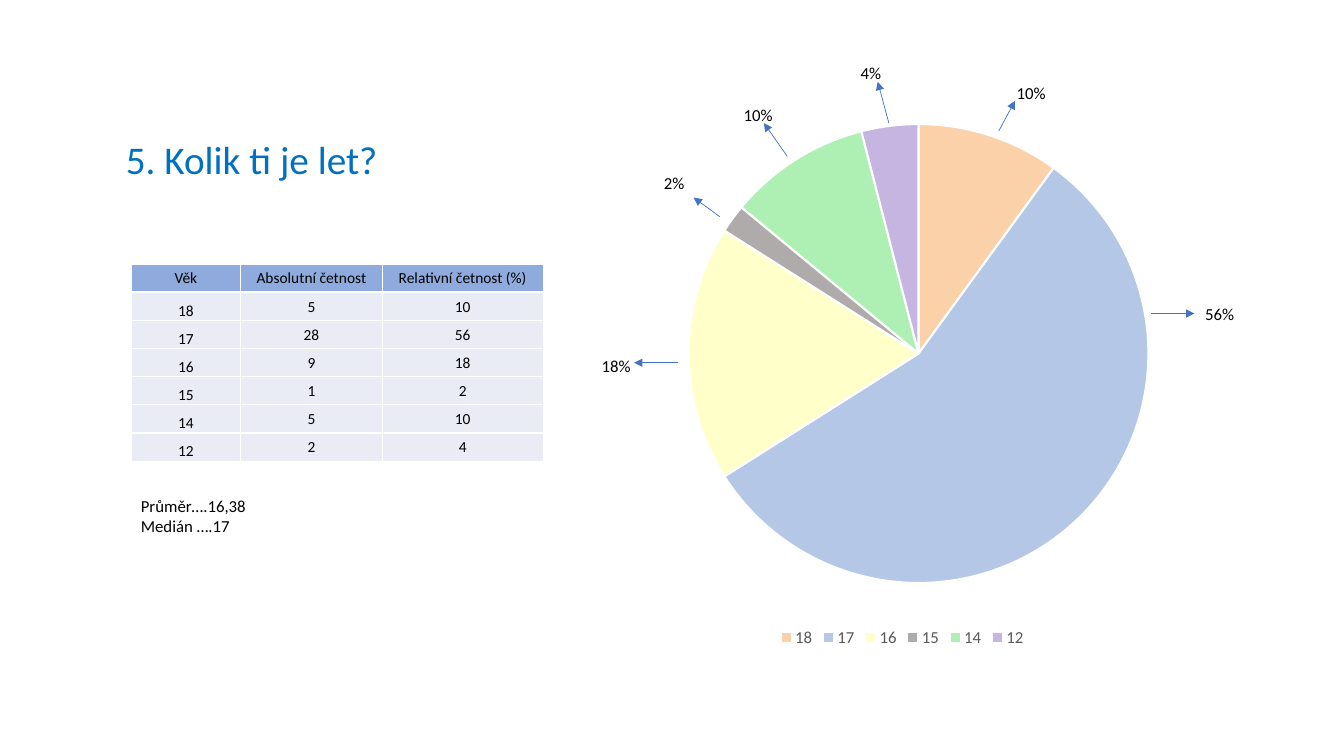
import pptx
import pptx.chart.data
import pptx.dml.color
import pptx.enum.chart
import pptx.enum.shapes
import pptx.enum.text
import pptx.oxml
import pptx.oxml.ns
import pptx.util
from pptx.util import Cm, Pt

FONT = "Calibri"
COLORS = {
    "title": "0070C0",
    "text": "000000",
    "legend": "595959",
    "header": "8FAADC",
    "body": "E9EBF5",
    "border": "FFFFFF",
    "arrow": "4472C4",
}
# Age, absolute frequency, relative frequency in percent, slice colour
AGES = [
    (18, 5, 10, "FAD1A8"),
    (17, 28, 56, "B4C7E7"),
    (16, 9, 18, "FFFFC9"),
    (15, 1, 2, "AFABAB"),
    (14, 5, 10, "AEF0B4"),
    (12, 2, 4, "C6B5E1"),
]
# For each age: arrow start, arrow end, label corner (cm)
CALLOUTS = [
    ((25.17, 3.3), (25.58, 2.54), (25.37, 1.96)),
    ((29.01, 7.9), (30.1, 7.9), (30.12, 7.52)),
    ((17.09, 9.14), (15.98, 9.14), (14.91, 8.84)),
    ((18.14, 5.46), (17.48, 4.98), (16.48, 4.22)),
    ((19.84, 3.94), (19.25, 3.1), (18.49, 2.51)),
    ((22.4, 3.1), (22.12, 2.06), (21.44, 1.45)),
]
HEADINGS = ("Věk", "Absolutní četnost", "Relativní četnost (%)")
COLUMN_WIDTHS = (2.77, 3.56, 4.06)
ROW_HEIGHT = 0.71


def rgb(name):
    return pptx.dml.color.RGBColor.from_string(COLORS.get(name, name))


def style_font(font, size, color):
    font.name = FONT
    font.size = Pt(size)
    font.color.rgb = rgb(color)


def add_title(slide, text):
    title = slide.shapes.title
    title.left, title.top, title.width, title.height = Cm(2.92), Cm(2.24), Cm(29.21), Cm(3.68)
    title.text_frame.text = text
    title.text_frame.vertical_anchor = pptx.enum.text.MSO_ANCHOR.MIDDLE
    heading = title.text_frame.paragraphs[0]
    heading.alignment = pptx.enum.text.PP_ALIGN.LEFT
    heading.line_spacing = 0.9
    style_font(heading.font, 28, "title")


def add_text(slide, lines, left, top, width, height, wrap):
    frame = slide.shapes.add_textbox(Cm(left), Cm(top), Cm(width), Cm(height)).text_frame
    frame.word_wrap = wrap
    frame.auto_size = pptx.enum.text.MSO_AUTO_SIZE.SHAPE_TO_FIT_TEXT
    frame.text = "\n".join(lines)
    for paragraph in frame.paragraphs:
        style_font(paragraph.font, 12, "text")


def add_borders(cell):
    properties = cell._tc.get_or_add_tcPr()
    for side in ("lnL", "lnR", "lnT", "lnB"):
        properties.append(pptx.oxml.parse_xml(
            f'<a:{side} {pptx.oxml.ns.nsdecls("a")} w="12700"><a:solidFill>'
            f'<a:srgbClr val="{COLORS["border"]}"/></a:solidFill></a:{side}>'))


def fill_cell(cell, value, fill, anchor):
    add_borders(cell)
    cell.fill.solid()
    cell.fill.fore_color.rgb = rgb(fill)
    cell.margin_left = cell.margin_right = cell.margin_top = Cm(0.03)
    cell.margin_bottom = 0
    cell.vertical_anchor = anchor
    cell.text = str(value)
    paragraph = cell.text_frame.paragraphs[0]
    paragraph.alignment = pptx.enum.text.PP_ALIGN.CENTER
    style_font(paragraph.font, 11, "text")


def add_frequency_table(slide):
    rows = [HEADINGS] + [age[:3] for age in AGES]
    table = slide.shapes.add_table(
        len(rows), len(HEADINGS), Cm(3.3), Cm(6.65),
        Cm(sum(COLUMN_WIDTHS)), Cm(ROW_HEIGHT * len(rows))).table
    for column, width in zip(table.columns, COLUMN_WIDTHS):
        column.width = Cm(width)
    anchors = pptx.enum.text.MSO_ANCHOR
    for r, values in enumerate(rows):
        table.rows[r].height = Cm(ROW_HEIGHT)
        for c, value in enumerate(values):
            anchor = anchors.BOTTOM if r and c == 0 else anchors.MIDDLE
            fill_cell(table.cell(r, c), value, "body" if r else "header", anchor)


def place_plot(chart, x, y, width, height):
    plot_area = chart.element.xpath(".//c:plotArea")[0]
    for layout in plot_area.xpath("c:layout"):
        plot_area.remove(layout)
    plot_area.insert(0, pptx.oxml.parse_xml(
        f'<c:layout {pptx.oxml.ns.nsdecls("c")}><c:manualLayout>'
        '<c:layoutTarget val="inner"/><c:xMode val="edge"/><c:yMode val="edge"/>'
        f'<c:x val="{x}"/><c:y val="{y}"/><c:w val="{width}"/><c:h val="{height}"/>'
        '</c:manualLayout></c:layout>'))


def add_age_pie(slide):
    data = pptx.chart.data.CategoryChartData()
    data.categories = [str(age[0]) for age in AGES]
    data.add_series("Series 1", [age[2] for age in AGES])
    chart = slide.shapes.add_chart(
        pptx.enum.chart.XL_CHART_TYPE.PIE,
        Cm(14.55), Cm(3.1), Cm(16.38), Cm(13.32), data).chart
    chart.has_title = False
    style_font(chart.font, 10, "text")
    chart.has_legend = True
    chart.legend.position = pptx.enum.chart.XL_LEGEND_POSITION.BOTTOM
    chart.legend.include_in_layout = False
    style_font(chart.legend.font, 12, "legend")
    pie = chart.plots[0]
    pie.vary_by_categories = True
    for i, age in enumerate(AGES):
        slice_format = pie.series[0].points[i].format
        slice_format.fill.solid()
        slice_format.fill.fore_color.rgb = rgb(age[3])
        slice_format.line.color.rgb = rgb("border")
        slice_format.line.width = Pt(1.5)
    place_plot(chart, 0.17, 0, 0.71, 0.87)


def add_arrow(slide, start, end):
    arrow = slide.shapes.add_connector(
        pptx.enum.shapes.MSO_CONNECTOR.STRAIGHT, *map(Cm, start + end))
    arrow.line.color.rgb = rgb("arrow")
    arrow.line.width = Pt(0.5)
    namespace = pptx.oxml.ns.nsdecls("a")
    arrow.line._get_or_add_ln().append(
        pptx.oxml.parse_xml(f'<a:tailEnd {namespace} type="triangle"/>'))
    arrow.element.spPr.append(pptx.oxml.parse_xml(f'<a:effectLst {namespace}/>'))


def main():
    deck = pptx.Presentation()
    deck.slide_width, deck.slide_height = Cm(33.87), Cm(19.05)
    slide = deck.slides.add_slide(deck.slide_layouts[5])

    # Question and its frequencies
    add_title(slide, "5. Kolik ti je let?")
    add_frequency_table(slide)

    # Pie with a percentage pointed out for every slice
    add_age_pie(slide)
    for age, (start, end, corner) in zip(AGES, CALLOUTS):
        add_arrow(slide, start, end)
        label = f"{age[2]}%"
        add_text(slide, [label], *corner, 1.24 if len(label) == 3 else 1.04, 0.76, False)

    # Mean and median
    add_text(slide, ["Průměr….16,38", "Medián ….17"], 3.3, 12.37, 5.69, 1.27, True)

    deck.save("out.pptx")


if __name__ == "__main__":
    main()
